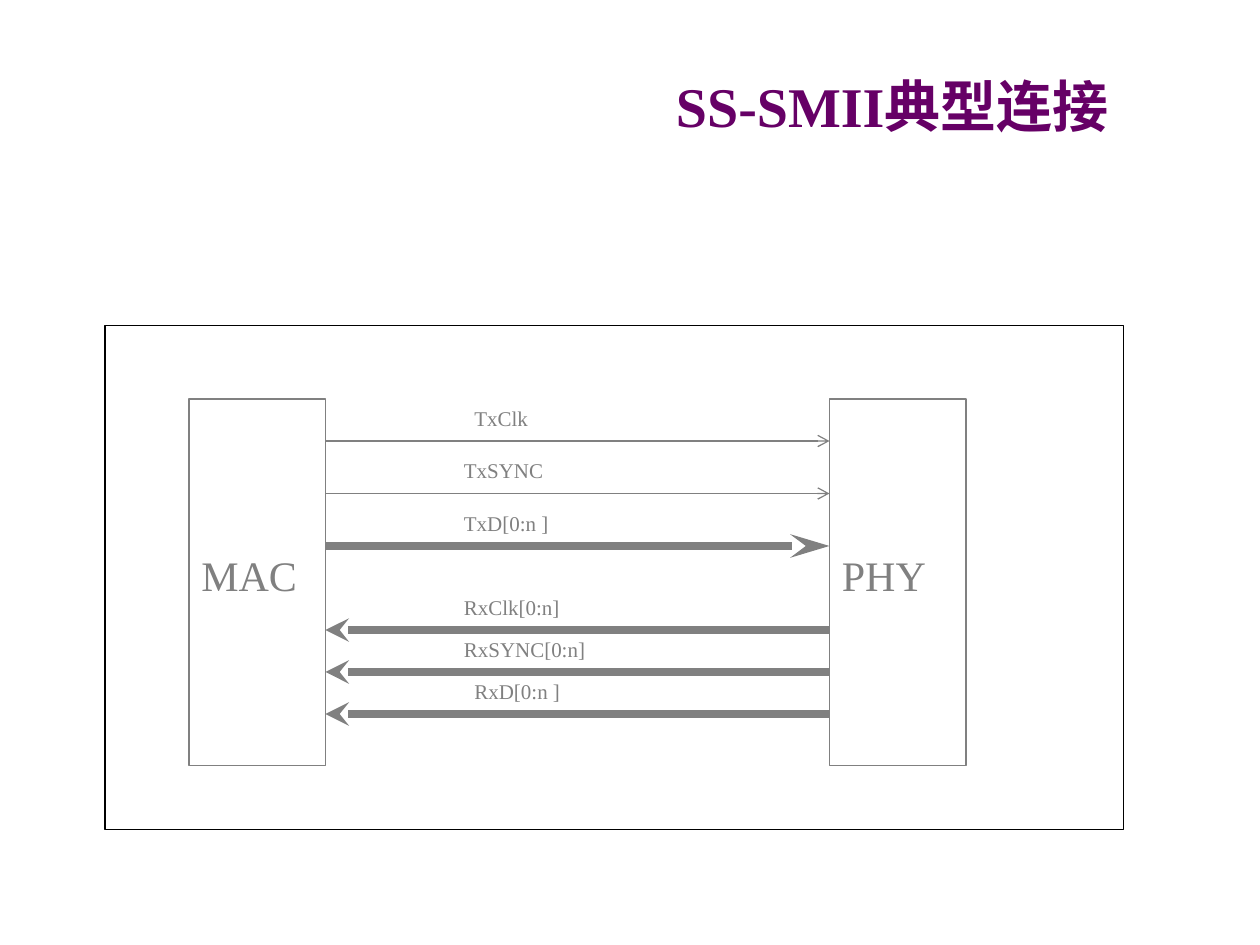
from pptx import Presentation
from pptx.dml.color import RGBColor
from pptx.enum.shapes import MSO_CONNECTOR as Link, MSO_SHAPE as Kind
from pptx.enum.text import MSO_ANCHOR as Anchor, MSO_AUTO_SIZE as Fit, PP_ALIGN as Align
from pptx.oxml.ns import qn
from pptx.util import Pt
from lxml.etree import SubElement as Sub

HEX = {"title": "660066", "gray": "808080", "black": "000000", "white": "FFFFFF"}
# name, label indent, line width, head, head length
SENT = [("TxClk", 78, 0.75, "arrow", "med"),
        ("TxSYNC", 72, 0.75, "arrow", "med"),
        ("TxD[0:n ]", 72, 4.5, "stealth", "lg")]
BACK = [("RxClk[0:n]", 72, 4.5, "stealth", "med"),
        ("RxSYNC[0:n]", 72, 4.5, "stealth", "med"),
        ("RxD[0:n ]", 78, 4.5, "stealth", "med")]


def color(name):
    return RGBColor.from_string(HEX[name])


def write(shape, text, size=12, ink="gray", bold=False,
          align=Align.LEFT, anchor=Anchor.TOP):
    frame = shape.text_frame
    frame.word_wrap = True
    frame.auto_size = Fit.NONE
    frame.vertical_anchor = anchor
    par = frame.paragraphs[0]
    par.alignment = align
    run = par.add_run()
    run.text = text
    font = run.font
    font.name, font.size, font.bold = "Times New Roman", Pt(size), bold
    font.color.rgb = color(ink)


def outline(slide, box, ink):
    rect = slide.shapes.add_shape(Kind.RECTANGLE, *map(Pt, box))
    rect.shadow.inherit = False
    rect.fill.background()
    rect.line.color.rgb = color(ink)
    rect.line.width = Pt(0.75)
    return rect


def arrow(slide, start, end, y, width, head, length):
    line = slide.shapes.add_connector(Link.STRAIGHT, Pt(start), Pt(y), Pt(end), Pt(y))
    line.line.color.rgb = color("gray")
    line.line.width = Pt(width)
    Sub(line.line._get_or_add_ln(), qn("a:tailEnd"), type=head, w="med", len=length)
    Sub(line._element.spPr, qn("a:effectLst"))


def title(slide, box):
    head = slide.shapes.title
    head.left, head.top, head.width, head.height = map(Pt, box)
    head.fill.solid()
    head.fill.fore_color.rgb = color("white")
    write(head, "SS-SMII典型连接", size=32, ink="title", bold=True,
          align=Align.CENTER, anchor=Anchor.MIDDLE)


def chip(slide, name, box):
    rect = outline(slide, box, "gray")
    write(rect, name, size=24, anchor=Anchor.MIDDLE)
    rect.text_frame.margin_bottom = Pt(12)


def bus(slide, signals, left, right, top, step, back=False):
    """Draw labelled signal lines between two chips, the first at top."""
    start, end = (right, left) if back else (left, right)
    for i, (name, indent, *style) in enumerate(signals):
        y = top + i * step
        arrow(slide, start, end, y, *style)
        label = slide.shapes.add_textbox(Pt(left + indent), Pt(y - 24), Pt(84), Pt(21.6))
        write(label, name)


def diagram(slide, box):
    x, y, w, h = box
    outline(slide, box, "black")
    wide, tall, gap = 78, 209.5, 288
    mac, top = x + 48, y + 42
    left = mac + wide
    right = left + gap
    chip(slide, "MAC", (mac, top, wide, tall))
    chip(slide, "PHY", (right, top, wide, tall))
    bus(slide, SENT, left, right, top + 24, 30)
    bus(slide, BACK, left, right, top + 132, 24, back=True)


def main():
    deck = Presentation()
    deck.slide_width, deck.slide_height = Pt(720), Pt(540)
    slide = deck.slides.add_slide(deck.slide_layouts[5])
    title(slide, (330, 36, 360, 48))
    diagram(slide, (60, 186, 582, 288))
    deck.save("out.pptx")


if __name__ == "__main__":
    main()
